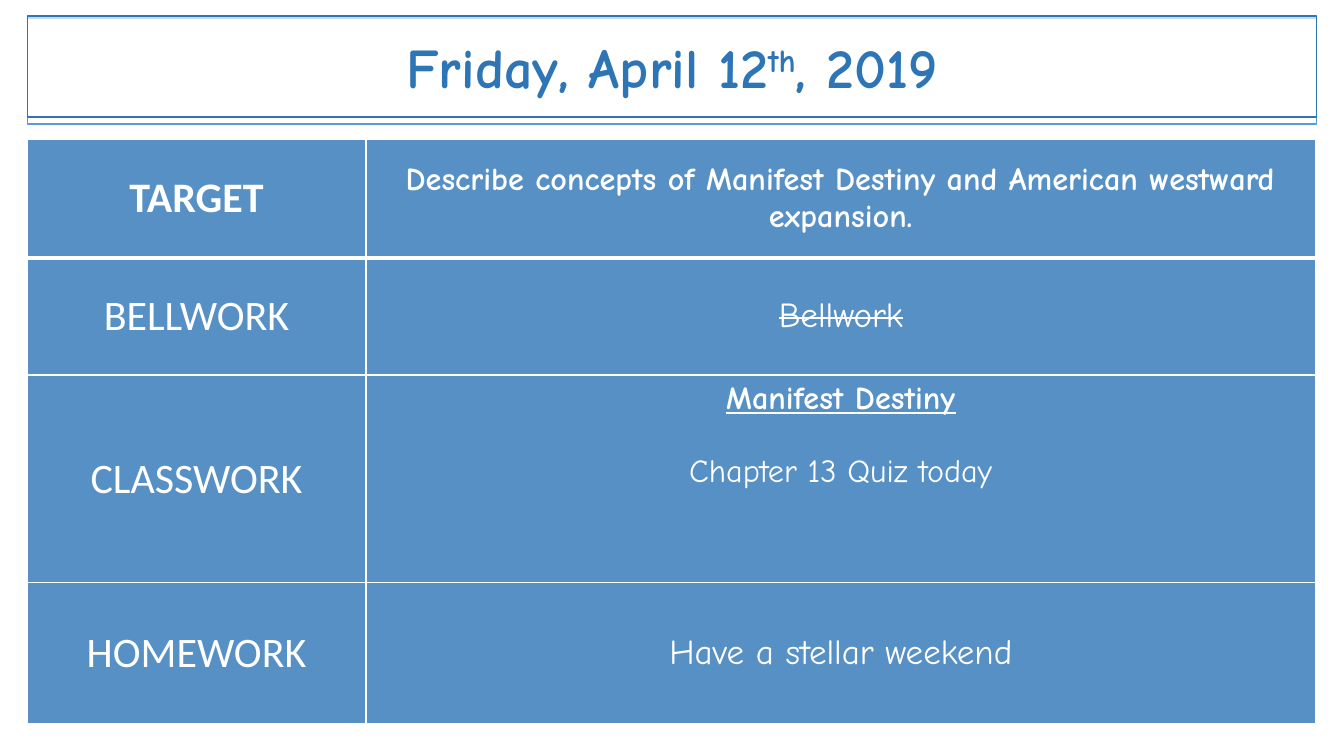
import pptx
import pptx.dml.color
import pptx.enum.shapes
import pptx.enum.text
import pptx.oxml
import pptx.oxml.ns
import pptx.util
from lxml import etree

COLORS = {"white": "FFFFFF", "frame": "5B9BD5", "blue": "2E75B6"}
HAND, PLAIN = "Comic Neue", "Calibri"
COLUMN_WIDTHS = (3.36, 9.42)
TARGET = "Describe concepts of Manifest Destiny and American westward expansion."
AGENDA = (
    (1.18, "TARGET", [(TARGET, {"size": 23, "bold": True})]),
    (1.16, "BELLWORK", [("Bellwork", {"size": 25, "strike": "sngStrike"})]),
    (2.06, "CLASSWORK", [
        ("Manifest Destiny", {"size": 23, "bold": True, "underline": True}),
        ("Chapter 13 Quiz today", {"size": 23, "space_before": 26}),
    ]),
    (1.4, "HOMEWORK", [("Have a stellar weekend", {"size": 25})]),
)


def rgb(color):
    """Return the named colour."""
    return pptx.dml.color.RGBColor.from_string(COLORS[color])


def paint(fill, color, opacity=100):
    """Fill with a solid colour at an opacity in percent."""
    fill.solid()
    fill.fore_color.rgb = rgb(color)
    if opacity < 100:
        clr = fill._xPr.find(".//" + pptx.oxml.ns.qn("a:srgbClr"))
        etree.SubElement(clr, pptx.oxml.ns.qn("a:alpha"), val=str(opacity * 1000))


def write(paragraph, text, color, size, name=HAND, bold=False, underline=False,
          strike=None, baseline=None, space_before=0):
    """Add one centred run with its format."""
    paragraph.alignment = pptx.enum.text.PP_ALIGN.CENTER
    paragraph.space_before = pptx.util.Pt(space_before)
    run = paragraph.add_run()
    run.text = text
    formats = {"size": pptx.util.Pt(size), "name": name, "bold": bold, "underline": underline}
    for key, value in formats.items():
        setattr(run.font, key, value)
    run.font.color.rgb = rgb(color)
    for key, value in {"strike": strike, "baseline": baseline}.items():
        if value:
            run.font._element.set(key, value)


def add_panel(slide, box, line, opacity=100):
    """Add an outlined white rectangle in the box."""
    panel = slide.shapes.add_shape(
        pptx.enum.shapes.MSO_SHAPE.RECTANGLE, *map(pptx.util.Inches, box))
    panel.shadow.inherit = False
    paint(panel.fill, "white", opacity)
    panel.line.color.rgb = rgb(line)
    panel.line.width = pptx.util.Pt(1)
    return panel


def add_date(slide, box):
    """Add the date banner in the box."""
    frame = add_panel(slide, box, "blue", 65).text_frame
    frame.word_wrap = True
    frame.vertical_anchor = pptx.enum.text.MSO_ANCHOR.MIDDLE
    for text, baseline in (("Friday, April 12", None), ("th", "30000"), (", 2019", None)):
        write(frame.paragraphs[0], text, "blue", 40, bold=True, baseline=baseline)


def add_borders(cell, bottom):
    """Draw the white borders of a cell, the lower one at its own weight."""
    properties = cell._tc.get_or_add_tcPr()
    for index, (side, weight) in enumerate(zip("LRTB", (1, 1, bottom[0], bottom[1]))):
        properties.insert(index, pptx.oxml.parse_xml(
            f'<a:ln{side} {pptx.oxml.ns.nsdecls("a")} w="{pptx.util.Pt(weight)}"><a:solidFill>'
            f'<a:srgbClr val="{COLORS["white"]}"/></a:solidFill></a:ln{side}>'))


def fill_cell(cell, lines, weights, anchor):
    """Format a cell and write its lines."""
    paint(cell.fill, "blue", 80)
    add_borders(cell, weights)
    cell.vertical_anchor = anchor
    for index, (text, formats) in enumerate(lines):
        frame = cell.text_frame
        paragraph = frame.add_paragraph() if index else frame.paragraphs[0]
        write(paragraph, text, "white", **formats)


def add_agenda(slide, box):
    """Add the agenda table in the box."""
    table = slide.shapes.add_table(
        len(AGENDA), len(COLUMN_WIDTHS), *map(pptx.util.Inches, box)).table
    table.first_row = table.horz_banding = False
    for column, width in zip(table.columns, COLUMN_WIDTHS):
        column.width = pptx.util.Inches(width)
    anchors = pptx.enum.text.MSO_ANCHOR
    for index, (height, heading, lines) in enumerate(AGENDA):
        table.rows[index].height = pptx.util.Inches(height)
        weights = (3 if index == 1 else 1, 3 if index == 0 else 1)
        label = [(heading, {"size": 30, "name": PLAIN, "bold": index == 0})]
        fill_cell(table.cell(index, 0), label, weights, anchors.MIDDLE)
        anchor = anchors.TOP if len(lines) > 1 else anchors.MIDDLE
        fill_cell(table.cell(index, 1), lines, weights, anchor)


def main():
    """Build the daily agenda slide."""
    deck = pptx.Presentation()
    deck.slide_width = pptx.util.Inches(13.33)
    deck.slide_height = pptx.util.Inches(7.5)
    slide = deck.slides.add_slide(deck.slide_layouts[6])
    left, width = 0.27, 12.79
    add_panel(slide, (left, 0.18, width, 1.05), "frame")
    add_agenda(slide, (left, 1.38, width, 5.8))
    add_date(slide, (left, 0.16, width, 1))
    deck.save("out.pptx")


if __name__ == "__main__":
    main()
